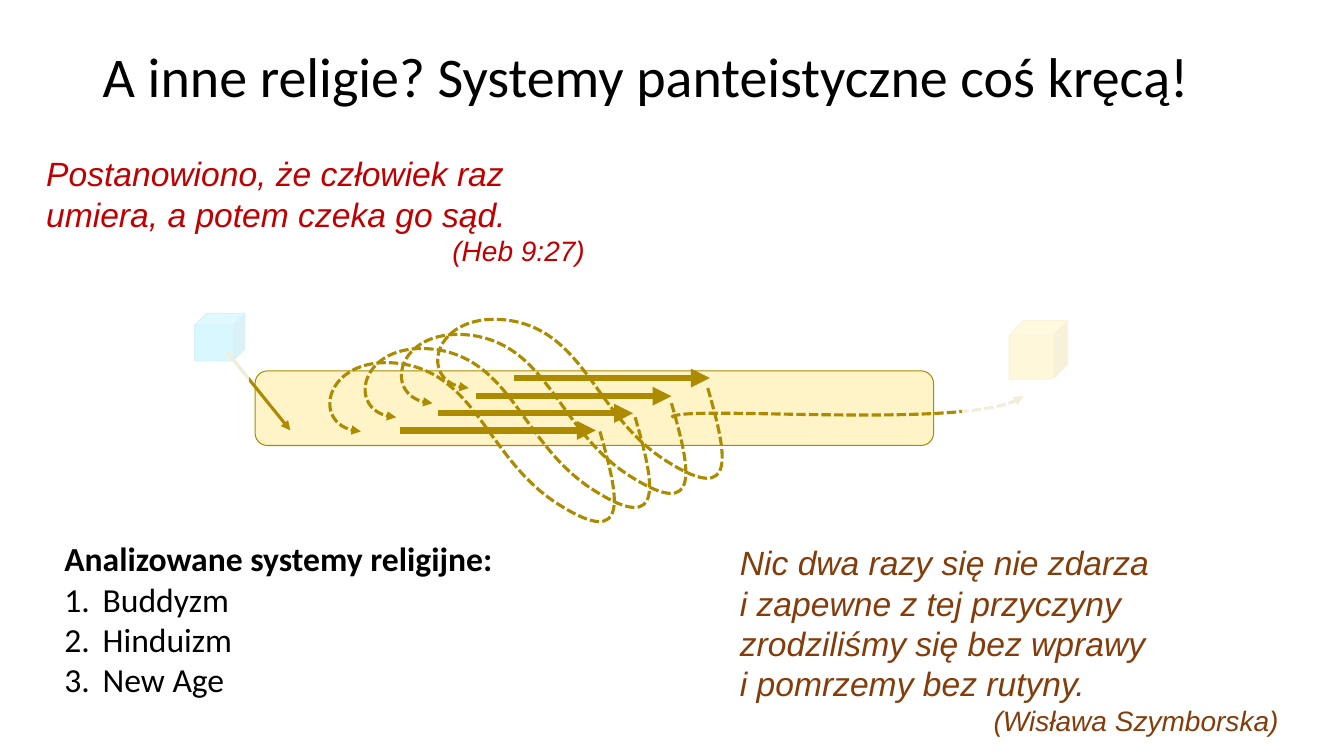
from lxml.etree import SubElement
from pptx import Presentation
from pptx.dml.color import RGBColor
from pptx.enum.dml import MSO_LINE
from pptx.enum.shapes import MSO_CONNECTOR, MSO_SHAPE
from pptx.enum.text import MSO_ANCHOR, PP_ALIGN
from pptx.oxml.ns import qn
from pptx.util import Pt

PX = 9144
COLORS = {
    "ink": "000000", "verse": "C00000", "poem": "843C0B", "white": "FFFFFF",
    "life": "FFF4C7", "path": "AD8B00",
    "birth": "00CCFF", "birth_edge": "00AED8", "exit": "FFCE00", "exit_edge": "E0B400",
}


def color(name):
    """Look up a palette colour."""
    return RGBColor.from_string(COLORS[name])


def add_solid(slide, kind, box, fill, edge=None):
    """Add a filled preset shape with an optional thin edge."""
    solid = slide.shapes.add_shape(kind, *(length * PX for length in box))
    solid.shadow.inherit = False
    solid.fill.solid()
    solid.fill.fore_color.rgb = color(fill)
    if edge:
        solid.line.color.rgb = color(edge)
        solid.line.width = Pt(0.75)
    else:
        solid.line.fill.background()
    return solid


def style_arrow(line, width):
    """Colour a line and give its end a triangular head."""
    line.color.rgb = color("path")
    line.width = Pt(width)
    SubElement(line._ln, qn("a:tailEnd"), type="triangle")


def add_arrow(slide, start, end, width):
    """Add a straight arrow."""
    arrow = slide.shapes.add_connector(
        MSO_CONNECTOR.STRAIGHT, *(length * PX for length in start + end))
    style_arrow(arrow.line, width)
    SubElement(arrow._element.spPr, qn("a:effectLst"))


def add_dashed_curve(slide, points):
    """Add a dashed Bezier arrow from a start and triples of control points."""
    builder = slide.shapes.build_freeform(*points[0], scale=PX)
    builder.add_line_segments(points[1:], close=False)
    curve = builder.convert_to_shape()
    segments = list(curve._element.iter(qn("a:lnTo")))
    for first in range(0, len(segments), 3):
        bezier = SubElement(segments[first].getparent(), qn("a:cubicBezTo"))
        for segment in segments[first:first + 3]:
            bezier.append(segment[0])
            segment.getparent().remove(segment)
    curve.shadow.inherit = False
    curve.fill.background()
    curve.line.dash_style = MSO_LINE.SQUARE_DOT
    style_arrow(curve.line, 2.25)


def add_text(slide, box, paragraphs, font, size, ink, italic=False):
    """Add a wrapped text box and return its frame."""
    frame = slide.shapes.add_textbox(*(length * PX for length in box)).text_frame
    frame.word_wrap = True
    frame.text = "\n".join(paragraphs)
    for paragraph in frame.paragraphs:
        for run in paragraph.runs:
            run.font.name = font
            run.font.size = Pt(size)
            run.font.italic = italic
            run.font.color.rgb = color(ink)
    return frame


def add_title(slide, box):
    """Place the heading."""
    heading = add_text(slide, box, ["A inne religie? Systemy panteistyczne coś kręcą!"],
                       "Calibri", 40, "ink")
    heading.vertical_anchor = MSO_ANCHOR.MIDDLE
    heading.paragraphs[0].line_spacing = 0.9


def add_quote(slide, box, words, source, ink):
    """Place an italic quotation with its source aligned right."""
    quote = add_text(slide, box, [words, source], "Arial", 24, ink, italic=True)
    attribution = quote.paragraphs[1]
    attribution.alignment = PP_ALIGN.RIGHT
    attribution.runs[0].font.size = Pt(20)


def add_systems(slide, box):
    """Place the numbered list of religious systems."""
    systems = add_text(
        slide, box, ["Analizowane systemy religijne:", "Buddyzm", "Hinduizm", "New Age"],
        "Calibri", 24, "ink")
    heading, *entries = systems.paragraphs
    heading.runs[0].font.bold = True
    for entry in entries:
        properties = entry._p.get_or_add_pPr()
        properties.set("marL", str(38 * PX))
        properties.set("indent", str(-38 * PX))
        SubElement(properties, qn("a:buAutoNum"), type="arabicPeriod")


def add_reincarnation(slide, box):
    """Draw the cycle of lives between two faded cubes."""
    left, top, width, height = box

    def at(x, y):
        """Shift a point into the box."""
        return left + x, top + y

    add_solid(slide, MSO_SHAPE.ROUNDED_RECTANGLE, at(227, 140) + (673, 74), "life", "path")
    add_dashed_curve(slide, [at(640, 186), at(648, 173), at(945, 200), at(989, 165)])
    add_solid(slide, MSO_SHAPE.CUBE, at(975, 90) + (58, 58), "exit", "exit_edge")
    add_solid(slide, MSO_SHAPE.CUBE, at(167, 83) + (50, 47), "birth", "birth_edge")
    add_arrow(slide, at(199, 121), at(262, 199), 2.25)

    rebirth = [(569, 200), (588, 266), (599, 317), (529, 273), (458, 229),
               (448, 145), (373, 133), (299, 122), (279, 197), (332, 200)]
    for life in range(4):
        right, up = life * 107 // 3, life * 43 // 3
        add_dashed_curve(slide, [at(x + right, y - up) for x, y in rebirth])
    for life in range(4):
        x, y = 371 + life * 113 // 3, 199 - life * 52 // 3
        add_arrow(slide, at(x, y), at(x + 194, y), 4.5)

    veil_width = 221
    for x in (width - veil_width, 0):
        veil_top = 45 if x else 0
        veil = add_solid(slide, MSO_SHAPE.RECTANGLE,
                         at(x, veil_top - 0) + (veil_width, height), "white")
        tint = veil.fill._xPr.find(qn("a:solidFill"))[0]
        SubElement(tint, qn("a:alpha"), val="85000")


def main():
    """Build and save the slide."""
    deck = Presentation()
    deck.slide_width, deck.slide_height = 1333 * PX, 750 * PX
    slide = deck.slides.add_slide(deck.slide_layouts[6])
    add_title(slide, (92, 40, 1150, 78))
    add_reincarnation(slide, (26, 228, 1149, 216))
    add_systems(slide, (54, 529, 627, 172))
    add_quote(slide, (724, 533, 554, 212),
              "Nic dwa razy się nie zdarza\vi zapewne z tej przyczyny\v"
              "zrodziliśmy się bez wprawy\vi pomrzemy bez rutyny.",
              "(Wisława Szymborska)", "poem")
    add_quote(slide, (36, 147, 554, 125),
              "Postanowiono, że człowiek raz umiera, a potem czeka go sąd.",
              "(Heb 9:27)", "verse")
    deck.save("out.pptx")


if __name__ == "__main__":
    main()
